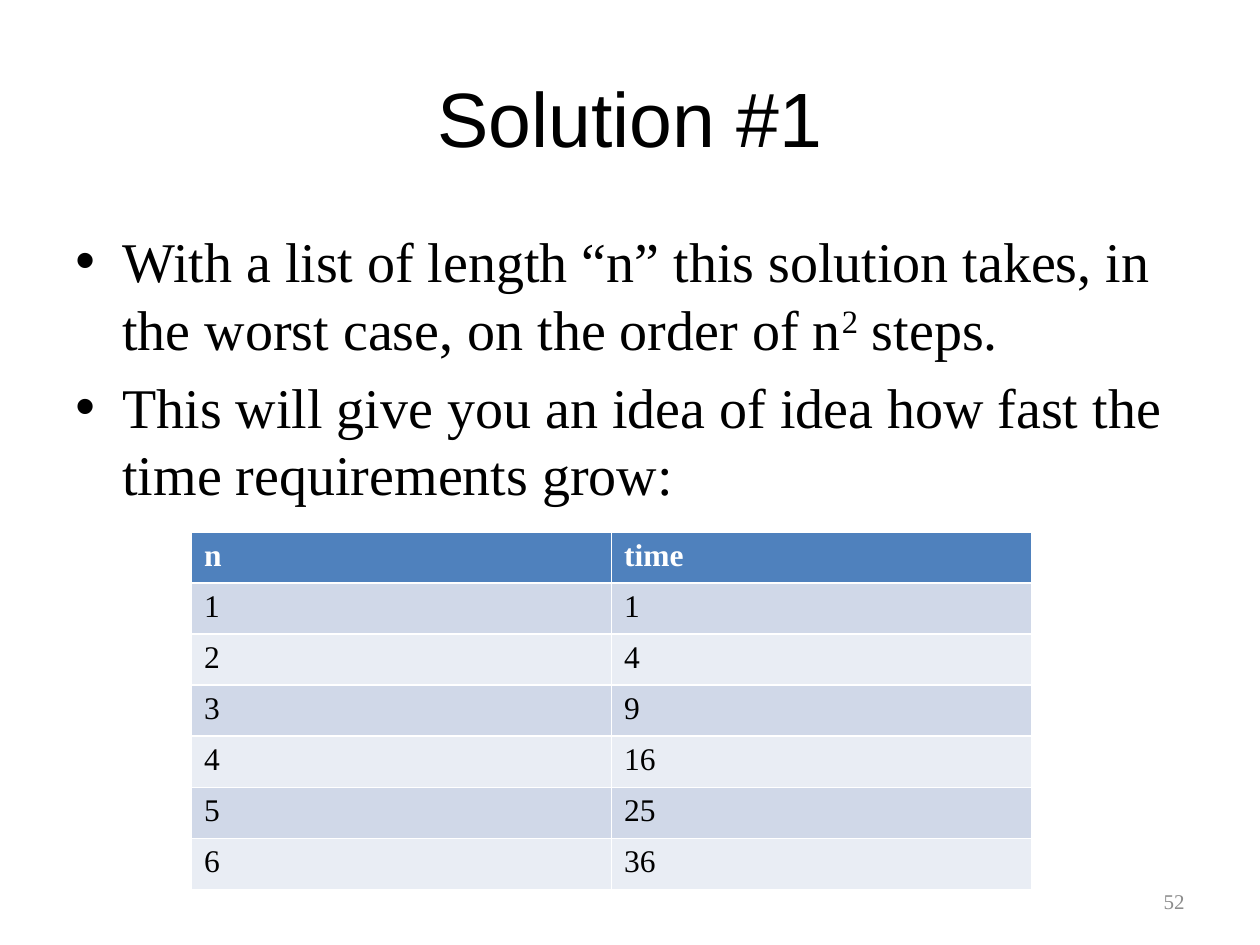
from pptx import Presentation
from pptx.dml.color import RGBColor
from pptx.enum.text import MSO_ANCHOR as Anchor, PP_ALIGN as Align
from pptx.oxml.ns import qn
from pptx.util import Cm, Pt
from lxml.etree import SubElement

COLORS = {
    "text": "000000",
    "number": "8C8C8C",
    "header_text": "FFFFFF",
    "header": "4F81BD",
    "odd_row": "D0D8E8",
    "even_row": "E9EDF4",
}
SERIF = "Times New Roman"


def style(paragraph, size, color, font=SERIF, bold=False, align=Align.LEFT):
    paragraph.font.name = font
    paragraph.font.size = Pt(size)
    paragraph.font.bold = bold
    paragraph.font.color.rgb = RGBColor.from_string(COLORS[color])
    paragraph.alignment = align


def add_text_frame(left, top, width, height, anchor=Anchor.MIDDLE):
    box = slide.shapes.add_textbox(Cm(left), Cm(top), Cm(width), Cm(height))
    box.text_frame.word_wrap = True
    box.text_frame.vertical_anchor = anchor
    return box.text_frame


presentation = Presentation()
presentation.slide_width, presentation.slide_height = Cm(25.4), Cm(19.05)
slide = presentation.slides.add_slide(presentation.slide_layouts[6])

# Title
title = add_text_frame(1.27, 0.76, 22.86, 3.18).paragraphs[0]
title.text = "Solution #1"
style(title, 44, "text", font="Arial", align=Align.CENTER)

# Bulleted body; each paragraph is a list of (text, baseline shift)
bullets = [
    [
        ("With a list of length “n” this solution takes, in the worst case, "
         "on the order of n", None),
        ("2", "30000"),
        (" steps.", None),
    ],
    [("This will give you an idea of idea how fast the time requirements grow:", None)],
]
body = add_text_frame(1.27, 4.45, 22.86, 6.63, Anchor.TOP)
for index, pieces in enumerate(bullets):
    paragraph = body.add_paragraph() if index else body.paragraphs[0]
    for text, baseline in pieces:
        run = paragraph.add_run()
        run.text = text
        if baseline:
            run.font._element.set("baseline", baseline)
    style(paragraph, 32, "text")
    paragraph.space_before = Pt(6.4)
    properties = paragraph._p.get_or_add_pPr()
    properties.set("marL", str(Cm(0.95)))
    properties.set("indent", str(-Cm(0.95)))
    bullet_font = SubElement(properties, qn("a:buFont"), typeface="Arial")
    bullet = SubElement(properties, qn("a:buChar"), char="•")
    default_run = properties.find(qn("a:defRPr"))
    default_run.addprevious(bullet_font)
    default_run.addprevious(bullet)

# Growth table: time is n squared
rows = [("n", "time")] + [(n, n ** 2) for n in range(1, 7)]
table = slide.shapes.add_table(
    len(rows), 2, Cm(3.86), Cm(10.72), Cm(16.94), Cm(7.21)).table
for row_index, values in enumerate(rows):
    is_header = row_index == 0
    fill = "header" if is_header else "odd_row" if row_index % 2 else "even_row"
    for column_index, value in enumerate(values):
        cell = table.cell(row_index, column_index)
        cell.text = str(value)
        cell.fill.solid()
        cell.fill.fore_color.rgb = RGBColor.from_string(COLORS[fill])
        style(cell.text_frame.paragraphs[0], 18,
              "header_text" if is_header else "text", bold=is_header)

# Slide number
number = add_text_frame(18.2, 17.66, 5.93, 1.01).paragraphs[0]
number.text = "52"
style(number, 12, "number", align=Align.RIGHT)

presentation.save("out.pptx")
